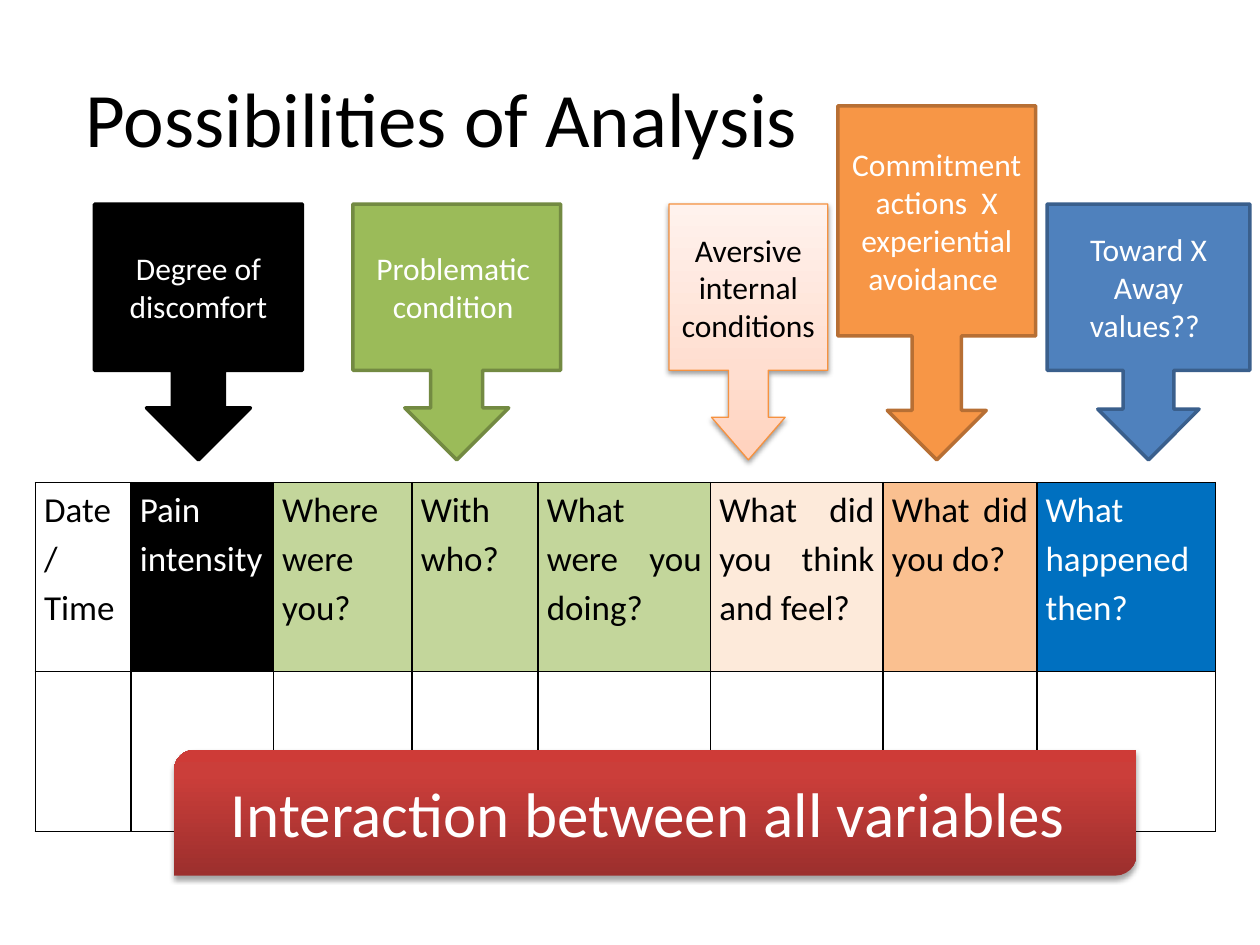
import pptx
import pptx.util
import pptx.dml.color
import pptx.enum.shapes
import pptx.enum.text
import pptx.oxml
import pptx.oxml.ns

Inches = pptx.util.Inches
Pt = pptx.util.Pt
Kind = pptx.enum.shapes.MSO_SHAPE
Align = pptx.enum.text.PP_ALIGN
Anchor = pptx.enum.text.MSO_ANCHOR
qn = pptx.oxml.ns.qn
NS = pptx.oxml.ns.nsdecls("a")


def color(code):
    return pptx.dml.color.RGBColor.from_string(code)


def apply(item, values):
    for name, value in values.items():
        setattr(item, name, value)


def solid(fill, code):
    if code:
        fill.solid()
        fill.fore_color.rgb = color(code)
    else:
        fill.background()


class Deck:
    font = "Calibri"
    edge = "000000"

    def __init__(self):
        self.show = pptx.Presentation()
        apply(self.show, {"slide_width": Inches(10), "slide_height": Inches(7.5)})
        self.slide = self.show.slides.add_slide(self.show.slide_layouts[5])

    def label(self, frame, text, size, ink, align=Align.CENTER, space=None):
        frame.word_wrap = True
        para = frame.paragraphs[0]
        apply(para, {"alignment": align, "line_spacing": space})
        run = para.add_run()
        run.text = text
        apply(run.font, {"name": self.font, "size": Pt(size)})
        run.font.color.rgb = color(ink)

    def title(self, text, box):
        shape = self.slide.shapes.title
        apply(shape, dict(zip(("left", "top", "width", "height"), map(Inches, box))))
        shape.text_frame.vertical_anchor = Anchor.MIDDLE
        self.label(shape.text_frame, text, 44, "000000")

    def blend(self, shape, stops):
        shape.fill.gradient()
        shape.fill.gradient_angle = 90
        group = shape._element.spPr.find(qn("a:gradFill")).find(qn("a:gsLst"))
        for old in list(group):
            group.remove(old)
        for pos, code in stops:
            group.append(pptx.oxml.parse_xml(
                f'<a:gs {NS} pos="{pos * 1000}"><a:srgbClr val="{code}"/></a:gs>'))

    def shade(self, shape, alpha, dist):
        effects = shape._element.spPr.find(qn("a:effectLst"))
        effects.append(pptx.oxml.parse_xml(
            f'<a:outerShdw {NS} blurRad="{Pt(3.1)}" dist="{Pt(dist)}" dir="5400000" '
            f'rotWithShape="0"><a:srgbClr val="000000"><a:alpha val="{alpha * 1000}"/>'
            '</a:srgbClr></a:outerShdw>'))

    def shape(self, kind, box, text, fill, line=None, width=2, size=18,
              ink="FFFFFF", shadow=None, adjust=()):
        shape = self.slide.shapes.add_shape(kind, *map(Inches, box))
        shape.shadow.inherit = False
        for index, value in enumerate(adjust):
            shape.adjustments[index] = value
        if isinstance(fill, str):
            solid(shape.fill, fill)
        else:
            self.blend(shape, fill)
        solid(shape.line.fill, line)
        if line:
            shape.line.width = Pt(width)
        if shadow:
            self.shade(shape, *shadow)
        shape.text_frame.vertical_anchor = Anchor.MIDDLE
        self.label(shape.text_frame, text, size, ink)

    def border(self, cell):
        props = cell._tc.get_or_add_tcPr()
        for index, side in enumerate(("lnL", "lnR", "lnT", "lnB")):
            props.insert(index, pptx.oxml.parse_xml(
                f'<a:{side} {NS} w="{Pt(1)}"><a:solidFill><a:srgbClr val="{self.edge}"/>'
                f'</a:solidFill></a:{side}>'))

    def table(self, box, widths, heights, heads):
        frame = self.slide.shapes.add_table(len(heights), len(widths), *map(Inches, box))
        table = frame.table
        apply(table, {"first_row": False, "horz_banding": False})
        for column, width in zip(table.columns, widths):
            column.width = Inches(width)
        for row, height in zip(table.rows, heights):
            row.height = Inches(height)
        for cell in table.iter_cells():
            apply(cell, {"margin_left": Inches(0.07), "margin_right": Inches(0.07),
                         "margin_top": 0, "margin_bottom": 0})
            cell.fill.background()
            self.border(cell)
        for index, (text, fill, ink) in enumerate(heads):
            cell = table.cell(0, index)
            solid(cell.fill, fill)
            self.label(cell.text_frame, text, 20, ink, Align.JUSTIFY, 1.15)


def main():
    deck = Deck()
    deck.title("Possibilities of Analysis ", (0.5, 0.3, 6.15, 1.25))
    black, white, green = "000000", "FFFFFF", "C3D69B"
    deck.table(
        (0.28, 3.83, 9.37, 2.77),
        (0.76, 1.13, 1.1, 1, 1.37, 1.37, 1.22, 1.42),
        (1.5, 1.27),
        (("Date / Time", None, black),
         ("Pain intensity", black, white),
         ("Where were you?", green, black),
         ("With who?", green, black),
         ("What were you doing?", green, black),
         ("What did you think and feel?", "FDEADA", black),
         ("What did you do?", "FAC090", black),
         ("What happened then?", "0070C0", white)))

    peach = ((0, "FFD2BD"), (35, "FFDED0"), (100, "FFF2ED"))
    soft = {"width": 0.75, "ink": black, "shadow": (38, 1.6),
            "adjust": (0.25, 0.232, 0.268, 0.65)}
    base = 3.65
    calls = (
        (0.75, 1.62, 1.65, "Degree of discomfort", black, black, {}),
        (2.8, 1.62, 1.65, "Problematic  condition ", "9BBB59", "738A42", {}),
        (5.31, 1.62, 1.26, "Aversive internal conditions", peach, "F69240", soft),
        (6.65, 0.84, 1.57, "Commitment actions  X experiential avoidance ",
         "F79646", "B76F34", {}),
        (8.31, 1.62, 1.61, "Toward X Away values?? ", "4F81BD", "3A5F8C", {}))
    for left, top, width, text, fill, line, style in calls:
        deck.shape(Kind.DOWN_ARROW_CALLOUT, (left, top, width, base - top),
                   text, fill, line, **style)

    deck.shape(Kind.ROUND_2_DIAG_RECTANGLE, (1.38, 5.95, 7.64, 1),
               "Interaction between all variables ",
               ((0, "9C2F2D"), (80, "CB3E3A"), (100, "CE3B37")),
               size=36, shadow=(35, 1.8))
    deck.show.save("out.pptx")


if __name__ == "__main__":
    main()
